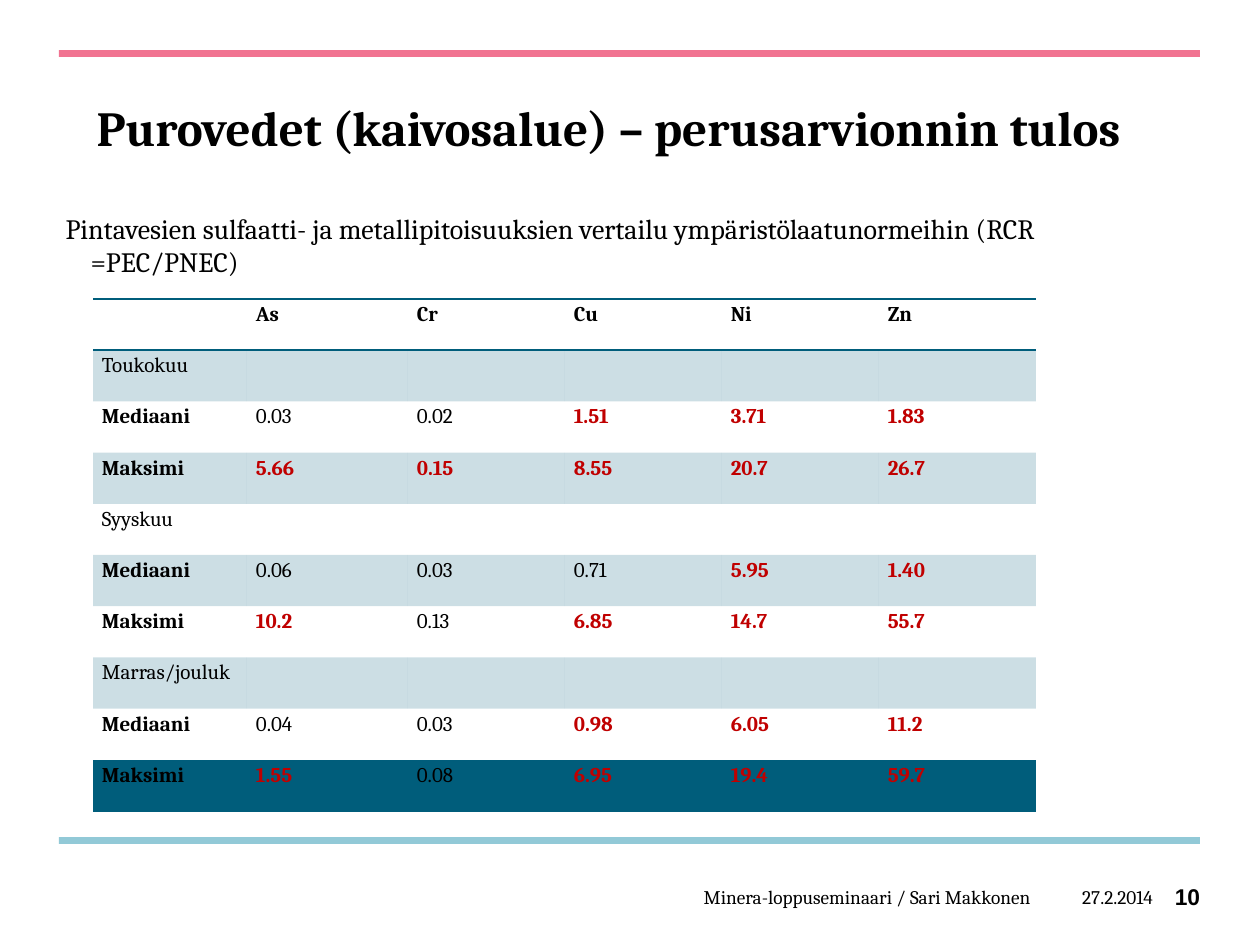
from dataclasses import dataclass
from lxml.etree import SubElement
from pptx import Presentation
from pptx.dml.color import RGBColor
from pptx.enum.shapes import MSO_SHAPE
from pptx.enum.text import MSO_ANCHOR, MSO_AUTO_SIZE, PP_ALIGN
from pptx.oxml.ns import qn
from pptx.util import Emu, Pt

SCALE = 914400 / 126
BLACK, RED, TEAL = "000000", "C00000", "005D7B"
PLAIN = "{2D5ABB26-0587-4C30-8999-92F81FD0307C}"


@dataclass
class Box:
    """Place and size in px."""
    x: int
    y: int
    w: int
    h: int


@dataclass
class Row:
    """Table row; hot marks each red value with 1."""
    name: str
    vals: str = ""
    hot: str = "00000"


@dataclass
class Note:
    """Footer text with its box and format."""
    text: str
    box: Box
    size: int = 11
    face: str = "Cambria"
    bold: bool = False
    top: int = 0
    anchor: MSO_ANCHOR = MSO_ANCHOR.MIDDLE


BARS = [(Box(59, 837, 1141, 7), "92C9D7"), (Box(59, 50, 1141, 7), "F17391")]
COLS = [154, 161, 157, 157, 157, 157]
GRID = Box(93, 299, sum(COLS), 512)
ROWS = [
    Row("", "As Cr Cu Ni Zn"),
    Row("Toukokuu"),
    Row("Mediaani", "0.03 0.02 1.51 3.71 1.83", "00111"),
    Row("Maksimi", "5.66 0.15 8.55 20.7 26.7", "11111"),
    Row("Syyskuu"),
    Row("Mediaani", "0.06 0.03 0.71 5.95 1.40", "00011"),
    Row("Maksimi", "10.2 0.13 6.85 14.7 55.7", "10111"),
    Row("Marras/jouluk"),
    Row("Mediaani", "0.04 0.03 0.98 6.05 11.2", "00111"),
    Row("Maksimi", "1.55 0.08 6.95 19.4 59.7", "10111"),
]
NOTES = [
    Note("27.2.2014", Box(1032, 880, 121, 34)),
    Note("Minera-loppuseminaari / Sari Makkonen", Box(421, 880, 610, 34)),
    Note("10", Box(1150, 880, 50, 34), 13, "Arial", True, 3, MSO_ANCHOR.TOP),
]


def px(n: float) -> Emu:
    """Turn px into EMU."""
    return Emu(round(n * SCALE))


def tint(code: str) -> RGBColor:
    """Turn a hex string into a colour."""
    return RGBColor.from_string(code)


def put(shape, box: Box) -> None:
    """Move and size a shape."""
    shape.left, shape.top = px(box.x), px(box.y)
    shape.width, shape.height = px(box.w), px(box.h)


def inset(part, side: int, top: int) -> None:
    """Set the inner margins of a cell or frame."""
    part.margin_left = part.margin_right = px(side)
    part.margin_top = part.margin_bottom = px(top)


def write(frame, text: str, *, size: int, face: str = "Cambria", color: str = BLACK,
          bold: bool = False, align=PP_ALIGN.LEFT, line=None, after: int = 0):
    """Write one formatted paragraph and return it."""
    para = frame.paragraphs[0]
    para.alignment = align
    para.space_before, para.space_after = Pt(0), Pt(after)
    if line:
        para.line_spacing = line
    run = para.add_run()
    run.text = text
    font = run.font
    font.size, font.name, font.bold = Pt(size), face, bold
    font.color.rgb = tint(color)
    return para


def bar(slide, box: Box, color: str) -> None:
    """Draw a plain coloured bar."""
    shape = slide.shapes.add_shape(MSO_SHAPE.RECTANGLE, 0, 0, 0, 0)
    put(shape, box)
    shape.shadow.inherit = False
    shape.fill.solid()
    shape.fill.fore_color.rgb = tint(color)
    shape.line.fill.background()


def head(slide) -> None:
    """Fill the title and body placeholders."""
    title, body = slide.placeholders
    put(title, Box(84, 91, 1101, 139))
    put(body, Box(53, 205, 1053, 88))
    for shape in (title, body):
        frame = shape.text_frame
        frame.word_wrap = True
        frame.auto_size = MSO_AUTO_SIZE.NONE
        frame.vertical_anchor = MSO_ANCHOR.TOP
    write(title.text_frame, "Purovedet (kaivosalue) – perusarvionnin tulos",
          size=28, bold=True, line=Pt(34))
    para = write(body.text_frame, "Pintavesien sulfaatti- ja metallipitoisuuksien vertailu "
                 "ympäristölaatunormeihin (RCR =PEC/PNEC)", size=16, after=5)
    props = para._p.get_or_add_pPr()
    props.set("marL", str(px(25)))
    props.set("indent", str(-px(25)))
    SubElement(props, qn("a:buNone"))


def rule(cell, side: str) -> None:
    """Draw a teal line on one side of a cell."""
    line = SubElement(cell._tc.get_or_add_tcPr(), qn(f"a:{side}"), w=str(Pt(1)))
    fill = SubElement(line, qn("a:solidFill"))
    SubElement(fill, qn("a:srgbClr"), val=TEAL)


def shade(cell, band: bool) -> None:
    """Give a cell a pale band or no fill."""
    if not band:
        cell.fill.background()
        return
    cell.fill.solid()
    cell.fill.fore_color.rgb = tint(TEAL)
    color = cell._tc.tcPr.find(f".//{qn('a:srgbClr')}")
    SubElement(color, qn("a:alpha"), val="20000")


def grid(slide) -> None:
    """Build the table of ratios."""
    count = len(ROWS)
    shape = slide.shapes.add_table(count, len(COLS), 0, 0, 0, 0)
    put(shape, GRID)
    table = shape.table
    table.first_row = table.horz_banding = False
    next(shape._element.iter(qn("a:tableStyleId"))).text = PLAIN
    for col, width in zip(table.columns, COLS):
        col.width = px(width)
    for i, row in enumerate(ROWS):
        table.rows[i].height = px(GRID.h / count)
        vals = row.vals.split() or [""] * len(row.hot)
        for j, (text, hot) in enumerate(zip([row.name, *vals], "0" + row.hot)):
            cell = table.cell(i, j)
            inset(cell, 9, 0)
            if i == 0:
                rule(cell, "lnT")
            if i in (0, count - 1):
                rule(cell, "lnB")
            shade(cell, i % 2 == 1)
            if text:
                bold = i == 0 or hot == "1" or (j == 0 and bool(row.vals))
                write(cell.text_frame, text, size=12, bold=bold, line=1.15, after=10,
                      color=RED if hot == "1" else BLACK)


def foot(slide, note: Note) -> None:
    """Add one footer text."""
    shape = slide.shapes.add_textbox(0, 0, 0, 0)
    put(shape, note.box)
    frame = shape.text_frame
    frame.word_wrap = True
    frame.vertical_anchor = note.anchor
    inset(frame, 0, note.top)
    write(frame, note.text, size=note.size, face=note.face, bold=note.bold,
          align=PP_ALIGN.RIGHT)


def main() -> None:
    """Build and save the slide."""
    deck = Presentation()
    deck.slide_width, deck.slide_height = px(1260), px(945)
    slide = deck.slides.add_slide(deck.slide_layouts[1])
    for box, color in BARS:
        bar(slide, box, color)
    head(slide)
    grid(slide)
    for note in NOTES:
        foot(slide, note)
    deck.save("out.pptx")


if __name__ == "__main__":
    main()
